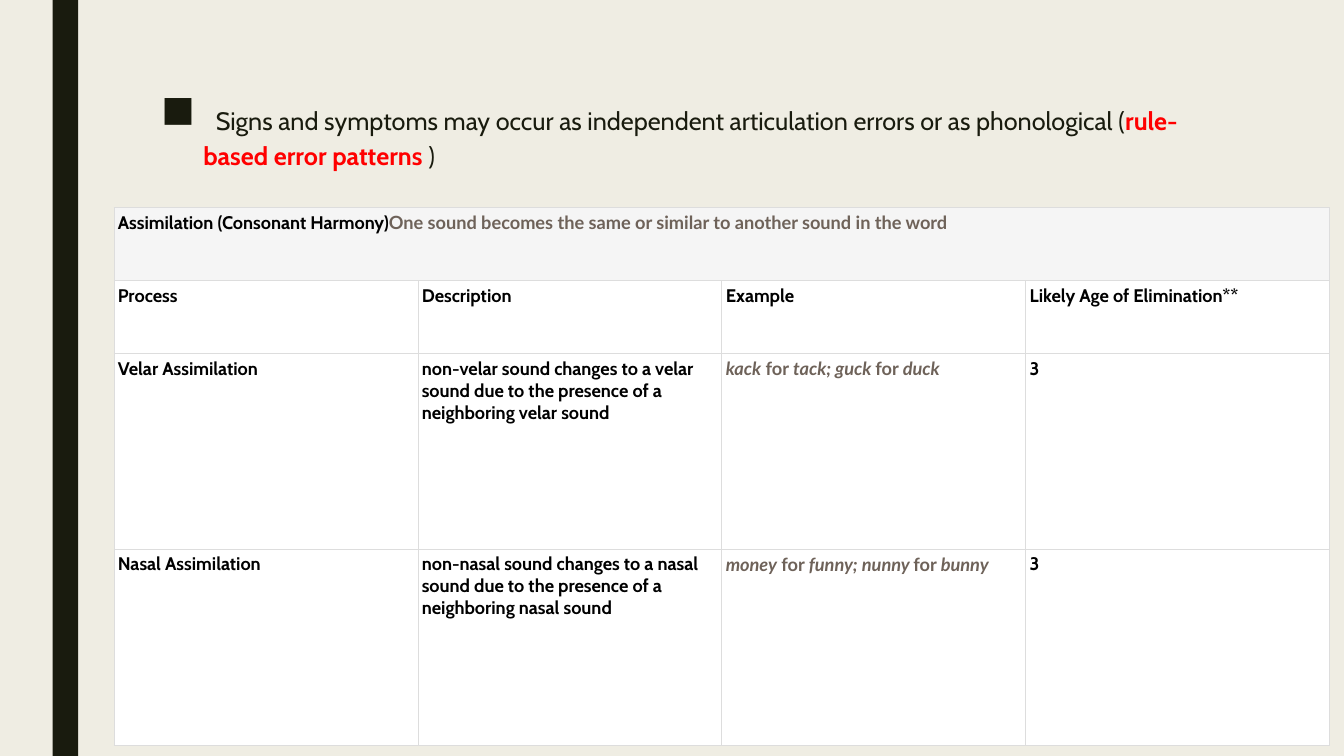
from dataclasses import dataclass

import pptx
import pptx.dml.color
import pptx.enum.shapes
import pptx.enum.text
import pptx.oxml
import pptx.oxml.ns
import pptx.util
from lxml import etree

Cm = pptx.util.Cm
Pt = pptx.util.Pt
RGBColor = pptx.dml.color.RGBColor

CREAM = RGBColor(0xEF, 0xED, 0xE3)
DARK = RGBColor(0x19, 0x1B, 0x0E)
RED = RGBColor(0xFF, 0x00, 0x00)
BLACK = RGBColor(0x00, 0x00, 0x00)
TAUPE = RGBColor(0x6E, 0x62, 0x59)
PALE_GREY = RGBColor(0xF5, 0xF5, 0xF5)
WHITE = RGBColor(0xFF, 0xFF, 0xFF)
BORDER = RGBColor(0xDD, 0xDD, 0xDD)


@dataclass(frozen=True)
class Span:
    """A stretch of text with one format."""
    text: str
    color: RGBColor = BLACK
    size: float = 13
    font: str = "Cabin"
    bold: bool = True
    italic: bool = False


def note(text: str, italic: bool = False) -> Span:
    return Span(text, TAUPE, font="Lato", italic=italic)


def example(first: str, middle: str, last: str) -> list[Span]:
    return [note(first, True), note(" for "), note(middle + " ", True),
            note("for"), note(" " + last, True)]


def write(paragraph, spans: list[Span]) -> None:
    for span in spans:
        run = paragraph.add_run()
        run.text = span.text
        run.font.name = span.font
        run.font.size = Pt(span.size)
        run.font.bold = span.bold
        run.font.italic = span.italic
        run.font.color.rgb = span.color


def add_square_bullet(paragraph, indent: int) -> None:
    properties = paragraph._p.get_or_add_pPr()
    properties.set("marL", str(indent))
    properties.set("indent", str(-indent))
    for tag, key, value in (("a:buFont", "typeface", "Arial"), ("a:buChar", "char", "■")):
        etree.SubElement(properties, pptx.oxml.ns.qn(tag)).set(key, value)


def add_borders(cell) -> None:
    properties = cell._tc.get_or_add_tcPr()
    for side in "LRTB":
        properties.append(pptx.oxml.parse_xml(
            f'<a:ln{side} {pptx.oxml.ns.nsdecls("a")} w="{Pt(0.5)}"><a:solidFill>'
            f'<a:srgbClr val="{BORDER}"/></a:solidFill></a:ln{side}>'))


def fill_cell(cell, spans: list[Span], background: RGBColor) -> None:
    cell.margin_left = cell.margin_right = cell.margin_top = cell.margin_bottom = Cm(0.1)
    add_borders(cell)
    cell.fill.solid()
    cell.fill.fore_color.rgb = background
    write(cell.text_frame.paragraphs[0], spans)


HEADING = [
    Span(" ", DARK, 39.6, bold=False),
    Span("Signs and symptoms may occur as independent articulation errors "
         "or as phonological (", DARK, 18, bold=False),
    Span("rule-based error patterns ", RED, 18),
    Span(")", DARK, 18, bold=False),
]
CATEGORY = [
    Span("Assimilation (Consonant Harmony)"),
    note("One sound becomes the same or similar to another sound in the word"),
]
PROCESSES = [
    [[Span(label)] for label in
     ("Process", "Description", "Example", "Likely Age of Elimination**")],
    [[Span("Velar Assimilation")],
     [Span("non-velar sound changes to a velar sound due to the presence "
           "of a neighboring velar sound")],
     example("kack", "tack; guck", "duck"), [Span("3")]],
    [[Span("Nasal Assimilation")],
     [Span("non-nasal sound changes to a nasal sound due to the presence "
           "of a neighboring nasal sound")],
     example("money", "funny; nunny", "bunny"), [Span("3")]],
]
ROW_HEIGHTS = [Cm(1.84), Cm(1.84), Cm(4.93), Cm(4.93)]
COLUMN_WIDTH = Cm(7.66)


def add_heading(slide) -> None:
    heading = slide.shapes.title
    heading.left, heading.top = Cm(3.81), Cm(1.9)
    heading.width, heading.height = Cm(26.67), Cm(4.11)
    frame = heading.text_frame
    frame.word_wrap = True
    frame.auto_size = pptx.enum.text.MSO_AUTO_SIZE.NONE
    frame.vertical_anchor = pptx.enum.text.MSO_ANCHOR.TOP
    sentence = frame.paragraphs[0]
    sentence.alignment = pptx.enum.text.PP_ALIGN.LEFT
    sentence.line_spacing = 0.94
    sentence.space_before = Pt(0)
    sentence.space_after = Pt(2)
    add_square_bullet(sentence, Cm(1.06))
    write(sentence, HEADING)


def add_process_table(slide) -> None:
    columns = len(PROCESSES[0])
    processes = slide.shapes.add_table(
        len(ROW_HEIGHTS), columns, Cm(2.87), Cm(5.23),
        COLUMN_WIDTH * columns, sum(ROW_HEIGHTS)).table
    processes.first_row = processes.horz_banding = False
    for column in processes.columns:
        column.width = COLUMN_WIDTH
    for row, height in zip(processes.rows, ROW_HEIGHTS):
        row.height = height

    # Category row across all columns
    processes.cell(0, 0).merge(processes.cell(0, columns - 1))
    for column in range(columns):
        fill_cell(processes.cell(0, column), [] if column else CATEGORY, PALE_GREY)

    # Column labels and processes
    for row, entries in enumerate(PROCESSES, start=1):
        for column, spans in enumerate(entries):
            fill_cell(processes.cell(row, column), spans, WHITE)


def main() -> None:
    deck = pptx.Presentation()
    deck.slide_width, deck.slide_height = Cm(33.87), Cm(19.05)
    slide = deck.slides.add_slide(deck.slide_layouts.get_by_name("Title Only"))
    slide.background.fill.solid()
    slide.background.fill.fore_color.rgb = CREAM

    # Dark side band
    band = slide.shapes.add_shape(pptx.enum.shapes.MSO_SHAPE.RECTANGLE,
                                  Cm(1.33), 0, Cm(0.64), deck.slide_height)
    band.shadow.inherit = False
    band.fill.solid()
    band.fill.fore_color.rgb = DARK
    band.line.fill.background()

    add_heading(slide)
    add_process_table(slide)
    deck.save("out.pptx")


if __name__ == "__main__":
    main()
